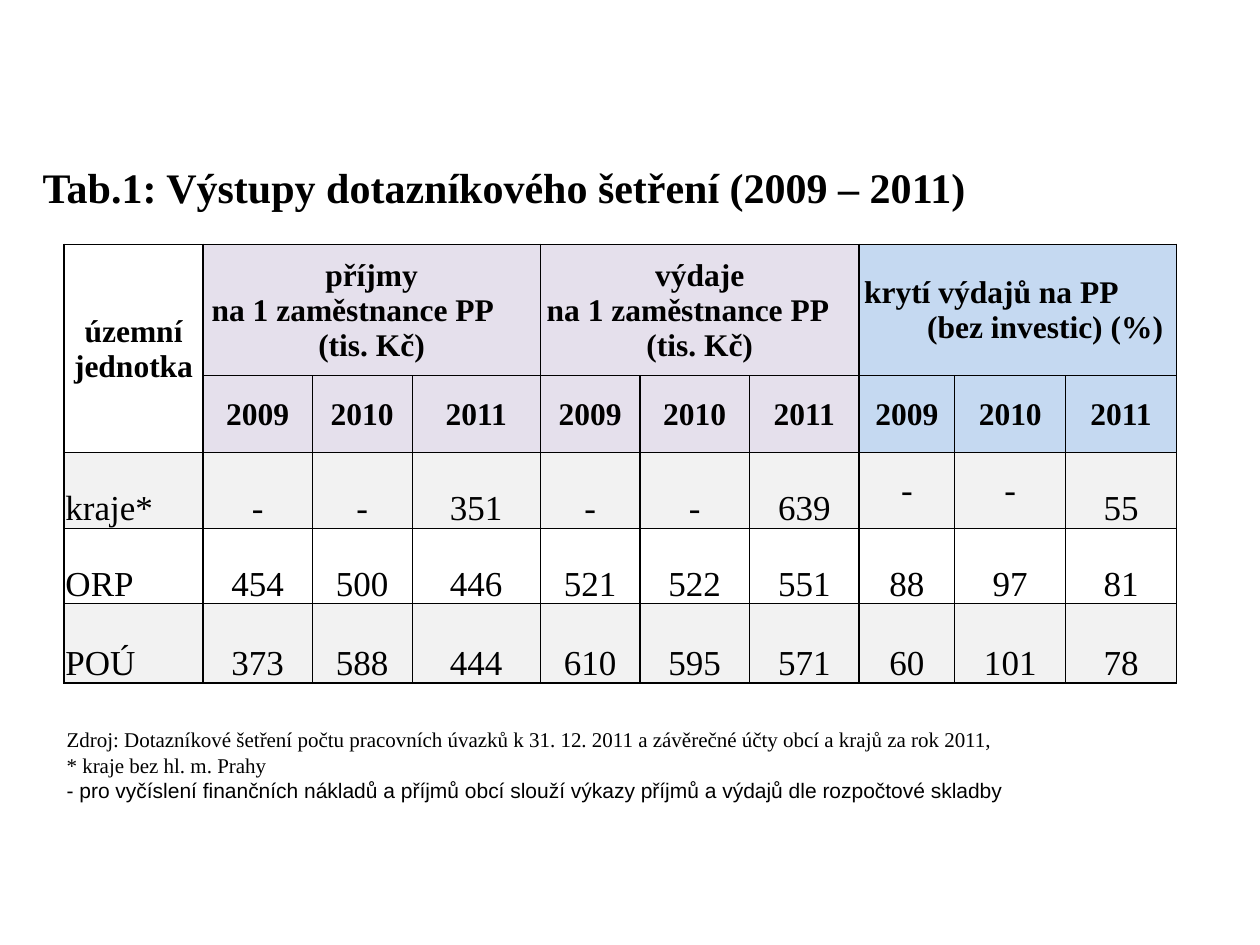
from pptx import Presentation
from pptx.dml.color import RGBColor
from pptx.enum.text import MSO_ANCHOR as Anchor, PP_ALIGN as Align
from pptx.oxml import parse_xml
from pptx.oxml.ns import nsdecls
from pptx.util import Inches, Pt

BLACK = RGBColor(0x00, 0x00, 0x00)
LILAC = RGBColor(0xE5, 0xE0, 0xEC)
BLUE = RGBColor(0xC5, 0xD9, 0xF1)
GREY = RGBColor(0xF2, 0xF2, 0xF2)
SERIF, SANS = "Times New Roman", "Arial"

COLUMN_WIDTHS = [1.1, 0.87, 0.79, 1.02, 0.79, 0.87, 0.87, 0.76, 0.88, 0.88]
ROW_HEIGHTS = [1.04, 0.6, 0.6, 0.6, 0.63]
YEARS = ["2009", "2010", "2011"]
# Each heading line has its text and left indent; None centres the line
GROUPS = [
    [("příjmy", None), ("na 1 zaměstnance PP", 0.06), ("(tis. Kč)", None)],
    [("výdaje", None), ("na 1 zaměstnance PP", 0.04), ("(tis. Kč)", None)],
    [("krytí výdajů na PP", 0.03), ("(bez investic) (%)", 0.53)],
]
UNITS = [
    ["kraje*", "-", "-", "351", "-", "-", "639", "-", "-", "55"],
    ["ORP", "454", "500", "446", "521", "522", "551", "88", "97", "81"],
    ["POÚ", "373", "588", "444", "610", "595", "571", "60", "101", "78"],
]
THICK_COLUMN_EDGES = {0, 1, 4, 5, 6, 7, 10}
THICK_ROW_EDGES = {0, len(ROW_HEIGHTS)}


def style_paragraph(para, size, bold=False, font=SERIF):
    for span in para.runs:
        span.font.name = font
        span.font.size = Pt(size)
        span.font.bold = bold
        span.font.color.rgb = BLACK


def add_text(page, left, top, width, height, lines, size, bold=False):
    """Place a text box; each line is a (text, font) pair."""
    box = page.shapes.add_textbox(Inches(left), Inches(top), Inches(width), Inches(height))
    frame = box.text_frame
    frame.word_wrap = True
    frame.text = "\n".join(text for text, font in lines)
    for para, (text, font) in zip(frame.paragraphs, lines):
        style_paragraph(para, size, bold, font)


def set_borders(cell, row, column):
    """Draw thick lines on group edges and thin lines elsewhere."""
    right = column + (cell.span_width if cell.is_merge_origin else 1)
    bottom = row + (cell.span_height if cell.is_merge_origin else 1)
    thick = {
        "lnL": column in THICK_COLUMN_EDGES,
        "lnR": right in THICK_COLUMN_EDGES,
        "lnT": row in THICK_ROW_EDGES,
        "lnB": bottom in THICK_ROW_EDGES,
    }
    properties = cell._tc.get_or_add_tcPr()
    for index, (side, is_thick) in enumerate(thick.items()):
        width = Pt(1) if is_thick else Pt(0.5)
        properties.insert(index, parse_xml(
            f'<a:{side} {nsdecls("a")} w="{width}"><a:solidFill>'
            f'<a:srgbClr val="{BLACK}"/></a:solidFill></a:{side}>'))


def cell_fill(row, column):
    if row >= 2:
        return GREY if row % 2 == 0 else None
    if column == 0:
        return None
    return LILAC if column < 7 else BLUE


def fill_cell(cell, lines, size, bold, anchor):
    cell.text = "\n".join(text for text, indent in lines)
    cell.vertical_anchor = anchor
    for para, (text, indent) in zip(cell.text_frame.paragraphs, lines):
        para.alignment = Align.CENTER if indent is None else Align.LEFT
        if indent:
            para._p.get_or_add_pPr().set("marL", str(Inches(indent)))
        style_paragraph(para, size, bold)


def add_survey_table(page, left, top, width, height):
    table = page.shapes.add_table(
        len(ROW_HEIGHTS), len(COLUMN_WIDTHS),
        Inches(left), Inches(top), Inches(width), Inches(height)).table
    table.first_row = table.horz_banding = False
    for column, size in zip(table.columns, COLUMN_WIDTHS):
        column.width = Inches(size)
    for row, size in zip(table.rows, ROW_HEIGHTS):
        row.height = Inches(size)

    # Merged headings
    table.cell(0, 0).merge(table.cell(1, 0))
    for start in (1, 4, 7):
        table.cell(0, start).merge(table.cell(0, start + 2))

    # Fills, margins and borders
    for row in range(len(ROW_HEIGHTS)):
        for column in range(len(COLUMN_WIDTHS)):
            cell = table.cell(row, column)
            cell.margin_left = cell.margin_right = cell.margin_top = Inches(0.01)
            cell.margin_bottom = 0
            color = cell_fill(row, column)
            if color is None:
                cell.fill.background()
            else:
                cell.fill.solid()
                cell.fill.fore_color.rgb = color
            set_borders(cell, row, column)

    # Heading text
    fill_cell(table.cell(0, 0), [("územní jednotka", None)], 18, True, Anchor.MIDDLE)
    for group, lines in enumerate(GROUPS):
        start = 1 + 3 * group
        fill_cell(table.cell(0, start), lines, 18, True, Anchor.MIDDLE)
        for offset, year in enumerate(YEARS):
            fill_cell(table.cell(1, start + offset), [(year, None)], 18, True, Anchor.MIDDLE)

    # Values by territorial unit
    for row, values in enumerate(UNITS, 2):
        for column, value in enumerate(values):
            missing_cover = column >= 7 and value == "-"
            fill_cell(table.cell(row, column), [(value, None if column else 0)], 20, False,
                      Anchor.MIDDLE if missing_cover else Anchor.BOTTOM)


def main():
    deck = Presentation()
    deck.slide_width, deck.slide_height = Inches(10), Inches(7.5)
    page = deck.slides.add_slide(deck.slide_layouts[6])

    # Title
    add_text(page, 0.24, 1.23, 9.76, 0.51,
             [("Tab.1: Výstupy dotazníkového šetření (2009 – 2011)", SERIF)], 24, True)
    add_survey_table(page, 0.51, 1.94, 8.82, 3.48)
    # Source and notes
    add_text(page, 0.43, 5.72, 8.11, 0.91, [
        ("Zdroj: Dotazníkové šetření počtu pracovních úvazků k 31. 12. 2011 "
         "a závěrečné účty obcí a krajů za rok 2011,", SERIF),
        ("* kraje bez hl. m. Prahy", SERIF),
        ("- pro vyčíslení finančních nákladů a příjmů obcí slouží výkazy příjmů "
         "a výdajů dle rozpočtové skladby", SANS),
    ], 12)
    deck.save("out.pptx")


if __name__ == "__main__":
    main()
